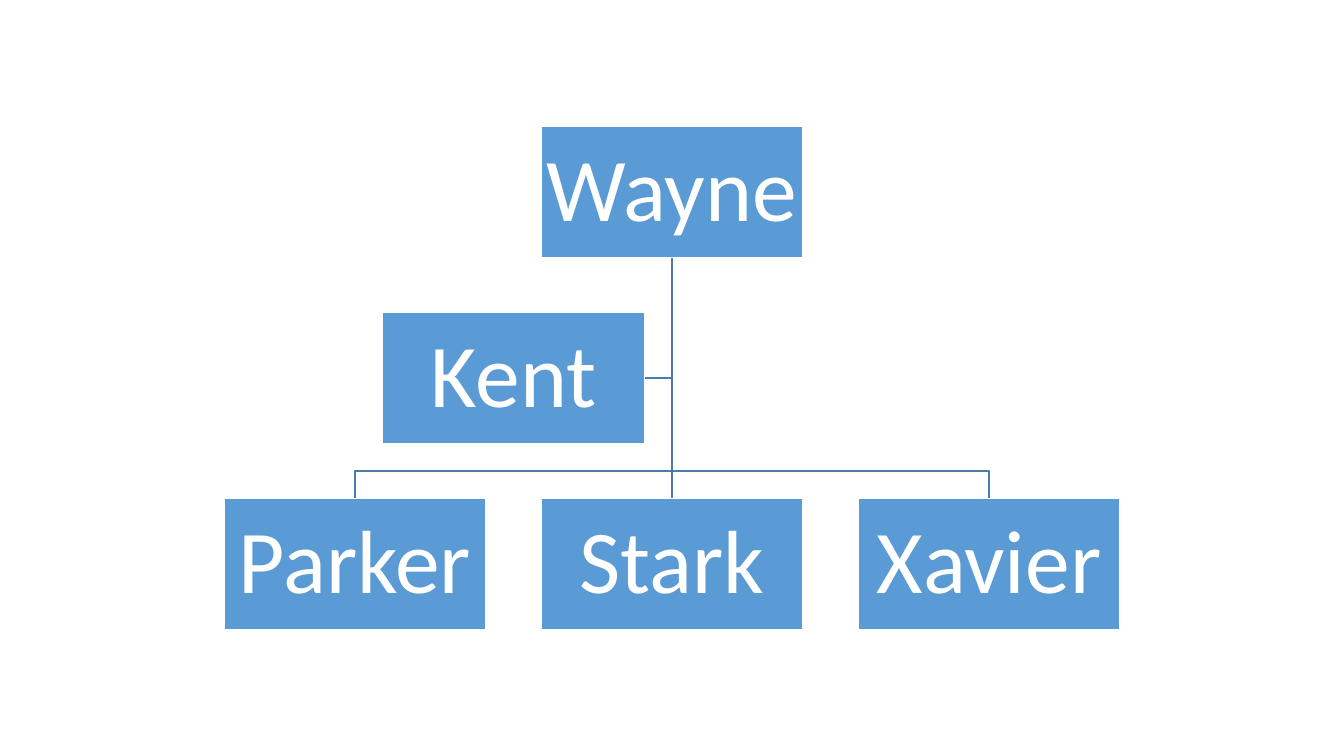
from dataclasses import dataclass
from lxml.etree import SubElement
from pptx import Presentation
from pptx.dml.color import RGBColor as RGB
from pptx.enum.shapes import MSO_CONNECTOR as Link, MSO_SHAPE as Shape
from pptx.enum.text import MSO_ANCHOR as Anchor, PP_ALIGN as Align
from pptx.oxml.ns import qn
from pptx.util import Pt


@dataclass(frozen=True)
class Theme:
    box: RGB = RGB(0x5B, 0x9B, 0xD5)
    link: RGB = RGB(0x49, 0x7C, 0xAB)
    white: RGB = RGB(0xFF, 0xFF, 0xFF)
    font: str = "Calibri"
    size: int = 64
    line: int = 1


theme = Theme()
WIDE, HIGH = 960, 540


def apply(part, values):
    for name, value in values.items():
        setattr(part, name, value)


def stroke(line, color):
    line.color.rgb = color
    line.width = Pt(theme.line)


def add_box(slide, name, left, top, wide, high):
    """A filled box with a centred name."""
    box = slide.shapes.add_shape(
        Shape.RECTANGLE, Pt(left), Pt(top), Pt(wide), Pt(high))
    box.shadow.inherit = False
    box.fill.solid()
    box.fill.fore_color.rgb = theme.box
    stroke(box.line, theme.white)
    frame = box.text_frame
    sides = ("left", "right", "top", "bottom")
    apply(frame, {f"margin_{side}": Pt(3) for side in sides})
    apply(frame, {"word_wrap": False, "vertical_anchor": Anchor.MIDDLE})
    para = frame.paragraphs[0]
    apply(para, {"alignment": Align.CENTER, "line_spacing": 0.9})
    run = para.add_run()
    run.text = name
    apply(run.font, {"name": theme.font, "size": Pt(theme.size)})
    run.font.color.rgb = theme.white


def add_bend(slide, points):
    """An open line through the points."""
    start, *rest = [(Pt(x), Pt(y)) for x, y in points]
    path = slide.shapes.build_freeform(*start)
    path.add_line_segments(rest, close=False)
    bend = path.convert_to_shape()
    bend.shadow.inherit = False
    bend.fill.background()
    stroke(bend.line, theme.link)


def add_trunk(slide, x, top, end):
    """A straight line down to the middle box."""
    trunk = slide.shapes.add_connector(
        Link.STRAIGHT, Pt(x), Pt(top), Pt(x), Pt(end))
    stroke(trunk.line, theme.link)
    SubElement(trunk._element.spPr, qn("a:effectLst"))


def add_chart(slide, head, aide, team, left, top, wide, high):
    """Head on top, aide at the left of the trunk, team in a row below."""
    # Boxes are twice as wide as high, with gaps of 21% of their width
    count = len(team)
    box_w = wide / (count + 0.21 * (count - 1))
    box_h, gap = box_w / 2, 0.21 * box_w
    mid = left + wide / 2
    first = top + (high - 3 * box_h - 2 * gap) / 2
    second, third = (first + n * (box_h + gap) for n in (1, 2))
    lefts = [left + n * (box_w + gap) for n in range(count)]

    # Links lie behind the boxes
    start = first + box_h
    aide_y = second + box_h / 2
    add_bend(slide, [(mid, start), (mid, aide_y), (mid - gap / 2, aide_y)])
    fork = third - gap / 2
    for x in (lefts[-1], lefts[0]):
        end = x + box_w / 2
        add_bend(slide, [(mid, start), (mid, fork), (end, fork), (end, third)])
    add_trunk(slide, mid, start, third)

    # Boxes
    spots = [(head, mid - box_w / 2, first)]
    spots += [(name, x, third) for name, x in zip(team, lefts)]
    spots.append((aide, mid - gap / 2 - box_w, second))
    for name, x, y in spots:
        add_box(slide, name, x, y, box_w, box_h)


def main():
    deck = Presentation()
    apply(deck, {"slide_width": Pt(WIDE), "slide_height": Pt(HIGH)})
    slide = deck.slides.add_slide(deck.slide_layouts[6])
    add_chart(slide, "Wayne", "Kent", ["Parker", "Stark", "Xavier"],
              160, 0, WIDE - 320, HIGH)
    deck.save("out.pptx")


if __name__ == "__main__":
    main()
